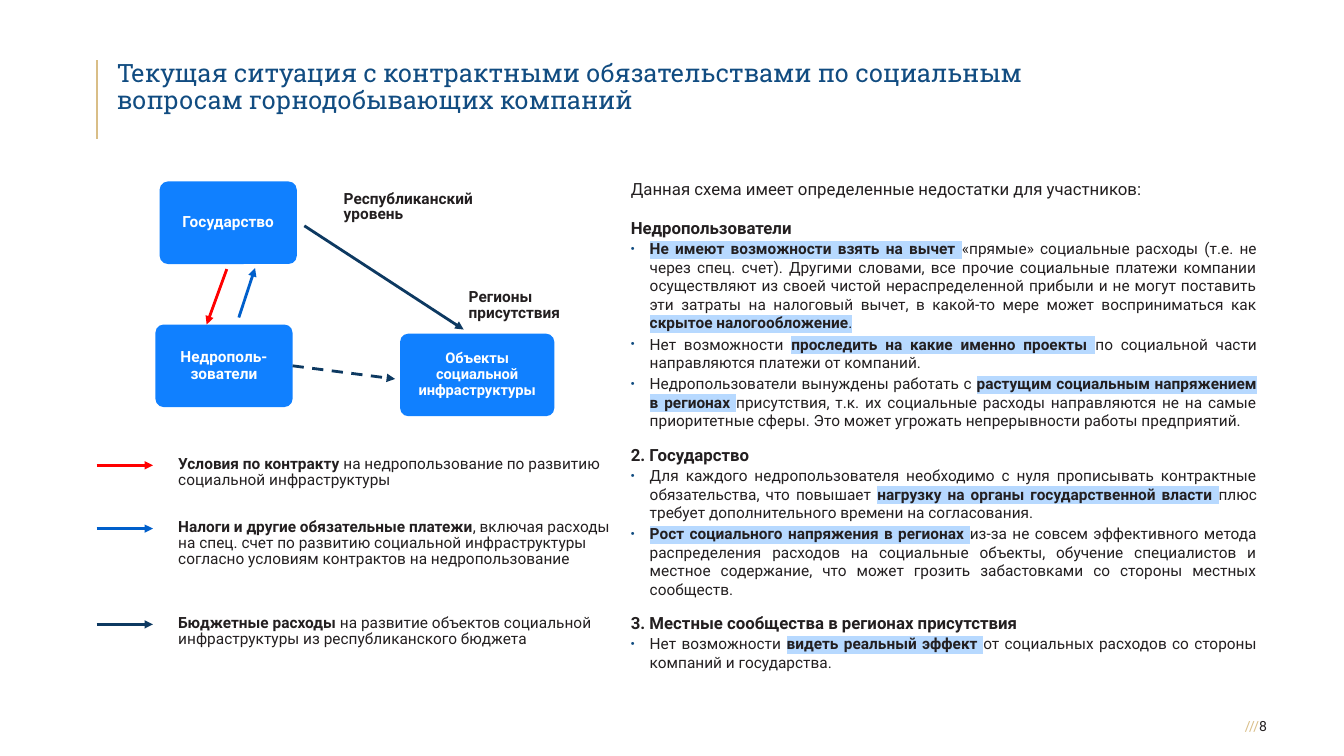
from typing import NamedTuple

from lxml.etree import SubElement
from pptx import Presentation
from pptx.dml.color import RGBColor
from pptx.enum.dml import MSO_LINE
from pptx.enum.shapes import MSO_CONNECTOR, MSO_SHAPE
from pptx.enum.text import MSO_ANCHOR, PP_ALIGN
from pptx.oxml.ns import qn
from pptx.util import Pt

GOLD = RGBColor(0xD9, 0xBE, 0x87)
TITLE_BLUE = RGBColor(0x11, 0x4C, 0x81)
CARD_BLUE = RGBColor(0x10, 0x80, 0xFF)
TAX_BLUE = RGBColor(0x00, 0x5F, 0xCB)
NAVY = RGBColor(0x0D, 0x39, 0x61)
RED = RGBColor(0xFF, 0x00, 0x00)
INK = RGBColor(0x23, 0x1F, 0x20)
WHITE = RGBColor(0xFF, 0xFF, 0xFF)
MARKER = RGBColor(0xB7, 0xD9, 0xFF)

# Span styles for the weaknesses panel: (bold, highlighted)
PLAIN, STRONG, MARKED_DOT = (False, False), (True, True), (False, True)

WEAKNESSES = [
    ("Недропользователи", 14, [
        [("Не имеют возможности взять на вычет ", STRONG),
         ("«прямые» социальные расходы (т.е. не через спец. счет). Другими словами, "
          "все прочие социальные платежи компании осуществляют из своей чистой "
          "нераспределенной прибыли и не могут поставить эти затраты на налоговый "
          "вычет, в какой-то мере может восприниматься как ", PLAIN),
         ("скрытое налогообложение", STRONG), (".", MARKED_DOT)],
        [("Нет возможности ", PLAIN),
         ("проследить на какие именно проекты ", STRONG),
         ("по социальной части направляются платежи от компаний.", PLAIN)],
        [("Недропользователи вынуждены работать с ", PLAIN),
         ("растущим социальным напряжением в регионах ", STRONG),
         ("присутствия, т.к. их социальные расходы направляются не на самые "
          "приоритетные сферы. Это может угрожать непрерывности работы "
          "предприятий.", PLAIN)],
    ]),
    ("2. Государство", 9.4, [
        [("Для каждого недропользователя необходимо с нуля прописывать контрактные "
          "обязательства, что повышает ", PLAIN),
         ("нагрузку на органы государственной власти ", STRONG),
         ("плюс требует дополнительного времени на согласования.", PLAIN)],
        [("Рост социального напряжения в регионах ", STRONG),
         ("из-за не совсем эффективного метода распределения расходов на социальные "
          "объекты, обучение специалистов и местное содержание, что может грозить "
          "забастовками со стороны местных сообществ.", PLAIN)],
    ]),
    ("3. Местные сообщества в регионах присутствия", 9.4, [
        [("Нет возможности ", PLAIN), ("видеть реальный эффект ", STRONG),
         ("от социальных расходов со стороны компаний и государства.", PLAIN)],
    ]),
]

LEGEND = [
    (0, RED, "Условия по контракту",
     " на недропользование по развитию социальной инфраструктуры"),
    (45.2, TAX_BLUE, "Налоги и другие обязательные платежи",
     ", включая расходы на спец. счет по развитию социальной инфраструктуры "
     "согласно условиям контрактов на недропользование"),
    (113.6, NAVY, "Бюджетные расходы",
     " на развитие объектов социальной инфраструктуры из республиканского бюджета"),
]


class Box(NamedTuple):
    """A region in points."""
    left: float
    top: float
    width: float
    height: float

    def inner(self, left, top, width, height):
        return Box(self.left + left, self.top + top, width, height)

    def lengths(self):
        return [Pt(value) for value in self]


def set_frame(frame, insets, anchor=MSO_ANCHOR.TOP):
    frame.word_wrap = True
    frame.vertical_anchor = anchor
    (frame.margin_left, frame.margin_top,
     frame.margin_right, frame.margin_bottom) = [Pt(inset) for inset in insets]
    return frame


def add_text(page, box, insets, anchor=MSO_ANCHOR.TOP):
    return set_frame(page.shapes.add_textbox(*box.lengths()).text_frame, insets, anchor)


def add_span(para, text, size, color=INK, bold=False, name="Roboto", marked=False):
    span = para.add_run()
    span.text = text
    font = span.font
    font.size, font.bold, font.name = Pt(size), bold, name
    font.color.rgb = color
    if marked:
        props = span._r.get_or_add_rPr()
        highlight = SubElement(props, qn("a:highlight"))
        SubElement(highlight, qn("a:srgbClr"), val=str(MARKER))
        props.find(qn("a:solidFill")).addnext(highlight)


def add_line(page, box, start, end, color, width=2, arrow=True):
    """Draw a straight line between two points relative to the box."""
    line = page.shapes.add_connector(
        MSO_CONNECTOR.STRAIGHT,
        Pt(box.left + start[0]), Pt(box.top + start[1]),
        Pt(box.left + end[0]), Pt(box.top + end[1]))
    line.line.color.rgb = color
    line.line.width = Pt(width)
    if arrow:
        SubElement(line.line._get_or_add_ln(), qn("a:tailEnd"), type="triangle")
    SubElement(line._element.spPr, qn("a:effectLst"))
    return line


def add_title(page, box):
    add_line(page, box, (0, 0), (0, box.height), GOLD, 1.5, arrow=False)
    para = add_text(page, box, (14.4, 0, 0, 11.5)).paragraphs[0]
    para.line_spacing = 0.9
    add_span(para, "Текущая ситуация с контрактными обязательствами по социальным "
             "вопросам горнодобывающих компаний", 18, TITLE_BLUE, name="Roboto Slab")


def add_page_number(page, box):
    para = add_text(page, box, (0, 0, 0, 0), MSO_ANCHOR.MIDDLE).paragraphs[0]
    para.alignment = PP_ALIGN.RIGHT
    add_span(para, "///", 10, GOLD)
    add_span(para, "8", 10)


def add_card(page, box, text, size, side_inset):
    card = page.shapes.add_shape(MSO_SHAPE.ROUNDED_RECTANGLE, *box.lengths())
    card.adjustments[0] = 0.1
    card.shadow.inherit = False
    card.fill.solid()
    card.fill.fore_color.rgb = CARD_BLUE
    card.line.fill.background()
    frame = set_frame(card.text_frame, (side_inset, 5, side_inset, 5), MSO_ANCHOR.MIDDLE)
    para = frame.paragraphs[0]
    para.alignment = PP_ALIGN.CENTER
    para.line_spacing = 0.9
    add_span(para, text, size, WHITE, bold=True)
    return card


def add_caption(page, box, strong, plain=""):
    para = add_text(page, box, (0, 2.9, 0, 0)).paragraphs[0]
    para.line_spacing = 0.85
    add_span(para, strong, 11, bold=True)
    if plain:
        add_span(para, plain, 11)


def add_scheme(page, box):
    add_card(page, box.inner(4, 0.6, 98, 59), "Государство", 11, 5.4)
    users = add_card(page, box.inner(1, 102.8, 98, 59), "Недрополь-зователи", 11, 5.4)
    add_card(page, box.inner(175.8, 109.3, 110.2, 59),
             "Объекты социальной инфраструктуры", 10.5, 10.5)
    add_line(page, box, (52, 63.2), (37.6, 102.8), RED)
    add_line(page, box, (60.6, 97.8), (72.2, 62.5), TAX_BLUE)
    add_line(page, box, (107.4, 32.3), (221.2, 106.4), NAVY)
    indirect = add_line(page, box, (99, 132.3), (172.2, 141.7), NAVY)
    indirect.line.dash_style = MSO_LINE.DASH
    indirect.begin_connect(users, 3)
    add_caption(page, box.inner(224.8, 75.5, 78, 26), "Регионы присутствия")
    add_caption(page, box.inner(135.5, 5, 98, 26), "Республиканский уровень")


def add_legend(page, box):
    for top, color, strong, plain in LEGEND:
        add_line(page, box, (0, top + 9), (40.3, top + 9), color)
        add_caption(page, box.inner(58.3, top, box.width - 58.3, 26), strong, plain)


def add_bullet(para):
    para.space_before = para.space_after = Pt(1)
    props = para._p.get_or_add_pPr()
    props.set("marL", str(Pt(13.5)))
    props.set("indent", str(-Pt(13.5)))
    SubElement(SubElement(props, qn("a:buClr")), qn("a:srgbClr"), val=str(TITLE_BLUE))
    SubElement(props, qn("a:buSzPct"), val="70000")
    SubElement(props, qn("a:buFont"), typeface="Arial")
    SubElement(props, qn("a:buChar"), char="•")


def add_weaknesses(page, box):
    frame = add_text(page, box, (7.2, 3.6, 7.2, 3.6))
    add_span(frame.paragraphs[0],
             "Данная схема имеет определенные недостатки для участников:", 12)
    for heading, gap, points in WEAKNESSES:
        para = frame.add_paragraph()
        para.space_before = Pt(gap)
        add_span(para, heading, 12, bold=True)
        for point in points:
            para = frame.add_paragraph()
            add_bullet(para)
            for text, (bold, marked) in point:
                add_span(para, text, 11, bold=bold, marked=marked)
    for para in frame.paragraphs:
        para.alignment = PP_ALIGN.JUSTIFY


def main():
    deck = Presentation()
    deck.slide_width, deck.slide_height = Pt(960), Pt(540)
    page = deck.slides.add_slide(deck.slide_layouts[6])
    add_title(page, Box(69, 43.2, 738, 56.2))
    add_scheme(page, Box(110, 129, 303, 169))
    add_legend(page, Box(69, 323.4, 374.5, 140))
    add_weaknesses(page, Box(443.5, 123.8, 461.5, 371.5))
    add_page_number(page, Box(877, 504, 28, 28.8))
    deck.save("out.pptx")


if __name__ == "__main__":
    main()
